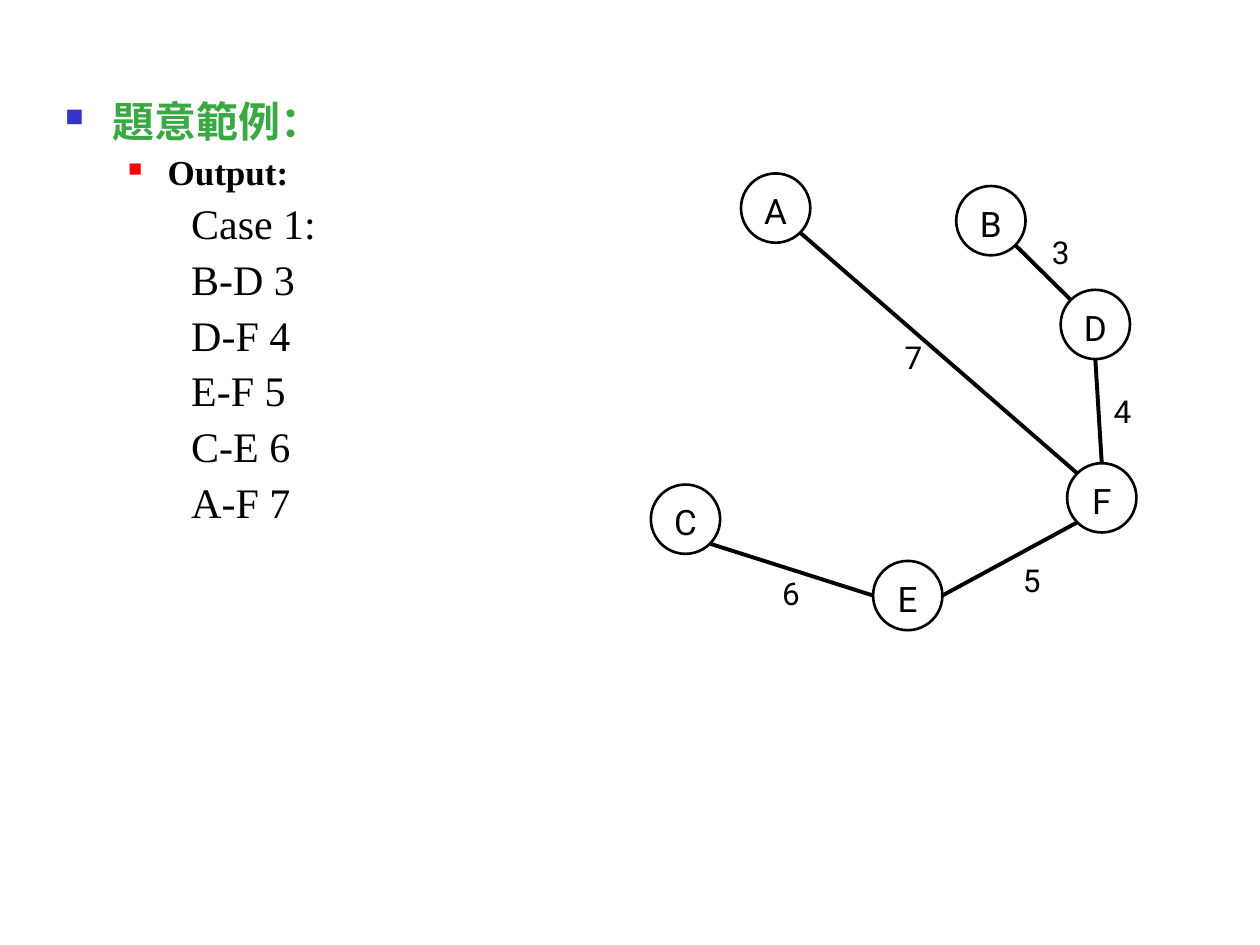
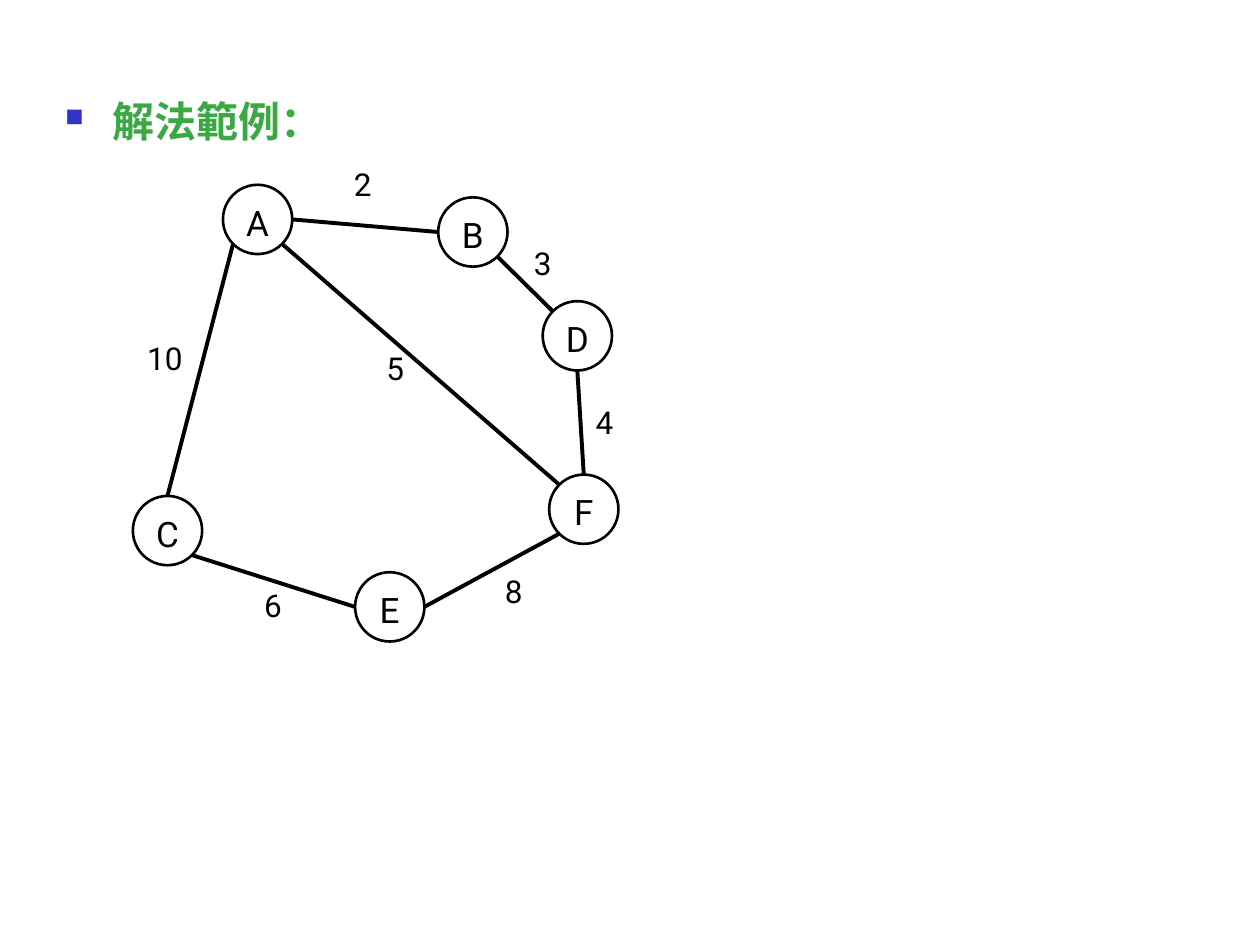
from lxml import etree
from pptx import Presentation
from pptx.dml.color import RGBColor
from pptx.enum.shapes import MSO_CONNECTOR, MSO_SHAPE
from pptx.enum.text import MSO_ANCHOR, PP_ALIGN
from pptx.oxml.ns import qn
from pptx.util import Pt

STRAIGHT, ELLIPSE = MSO_CONNECTOR.STRAIGHT, MSO_SHAPE.OVAL
MIDDLE, TOP = MSO_ANCHOR.MIDDLE, MSO_ANCHOR.TOP
LEFT, CENTER = PP_ALIGN.LEFT, PP_ALIGN.CENTER

# Shared style
COLORS = {"heading": "3BA943", "text": "000000",
          "bullet": "3333CC", "sub_bullet": "FF0000"}
BODY_FONT, GRAPH_FONT = "Times New Roman", "Roboto"
BODY_LEFT, BODY_TOP, BODY_WIDTH = 30.2, 54, 635.8
NODE_SIZE = 39.6
SMALL_LABEL, LARGE_LABEL, WIDE_LABEL = (19.4, 25.2), (28, 36), (41, 36)

# Paragraph levels: size, bold, colour, margin, hanging, bullet colour, bullet percent
LEVELS = {
    "heading": (24, True, "heading", 27, 27, "bullet", 60),
    "item": (20, True, "text", 58.5, 22.5, "sub_bullet", 55),
    "line": (24, False, "text", 72, 0, None, None),
}

# Graph: places are relative to the graph's left top corner
NODES = {"A": (51.5, 0), "B": (174.5, 7.2), "D": (234.2, 66.5),
         "F": (237.9, 165.6), "C": (0, 177.8), "E": (127, 221.4)}
DIAGONAL = 0.5 ** 0.5
SITES = {"top": (0, -1), "bottom": (0, 1), "left": (-1, 0), "right": (1, 0),
         "top left": (-DIAGONAL, -DIAGONAL), "bottom left": (-DIAGONAL, DIAGONAL),
         "bottom right": (DIAGONAL, DIAGONAL)}
# Edge: site at the first node, site at the second, place of the weight
EDGES = {
    "BD": ("bottom right", "top left", (222.1, 30.5)),
    "DF": ("bottom", "top", (257.4, 121.2)),
    "CE": ("bottom right", "left", (68, 225.6)),
    "EF": ("right", "bottom left", (205.6, 217.7)),
    "AF": ("bottom right", "top left", (137.9, 90.3)),
    "AC": ("bottom left", "top", (1.1, 84.5)),
    "AB": ("right", "left", (119.2, -14.9)),
}

SLIDES = [
    {"body": [("heading", "題意範例："), ("item", "Output:"), ("line", "Case 1:"),
              ("line", "B-D 3"), ("line", "D-F 4"), ("line", "E-F 5"),
              ("line", "C-E 6"), ("line", "A-F 7")],
     "body_height": 442.8,
     "origin": (371.9, 99.1),
     "weights": {"BD": ("3", SMALL_LABEL), "DF": ("4", SMALL_LABEL),
                 "AF": ("7", SMALL_LABEL), "CE": ("6", SMALL_LABEL),
                 "EF": ("5", SMALL_LABEL)}},
    {"body": [("heading", "解法範例：")],
     "body_height": 34.6,
     "origin": (75.9, 105.6),
     "weights": {"BD": ("3", SMALL_LABEL), "DF": ("4", SMALL_LABEL),
                 "AF": ("5", LARGE_LABEL), "CE": ("6", SMALL_LABEL),
                 "EF": ("8", LARGE_LABEL), "AC": ("10", WIDE_LABEL),
                 "AB": ("2", LARGE_LABEL)}},
]


def rgb(name):
    return RGBColor.from_string(COLORS[name])


def points(*values):
    return [Pt(value) for value in values]


def style_font(paragraph, name, size, color="text", bold=False):
    for run in paragraph.runs:
        font = run.font
        font.name, font.size, font.bold = name, Pt(size), bold
        font.color.rgb = rgb(color)


def set_margins(text_frame, left, top, right, bottom):
    text_frame.margin_left, text_frame.margin_top = points(left, top)
    text_frame.margin_right, text_frame.margin_bottom = points(right, bottom)


def set_bullet(paragraph, margin, hanging, color, percent):
    properties = paragraph._p.get_or_add_pPr()
    properties.set("marL", str(Pt(margin)))
    properties.set("indent", str(-Pt(hanging)))
    if color is None:
        etree.SubElement(properties, qn("a:buNone"))
        return
    bullet_color = etree.SubElement(properties, qn("a:buClr"))
    etree.SubElement(bullet_color, qn("a:srgbClr"), val=COLORS[color])
    etree.SubElement(properties, qn("a:buSzPct"), val=str(percent * 1000))
    etree.SubElement(properties, qn("a:buChar"), char="■")


def add_body(slide, lines, height):
    box = slide.shapes.add_textbox(*points(BODY_LEFT, BODY_TOP, BODY_WIDTH, height))
    text_frame = box.text_frame
    text_frame.word_wrap = True
    text_frame.text = "\n".join(text for _, text in lines)
    for paragraph, (level, _) in zip(text_frame.paragraphs, lines):
        size, bold, color, *bullet = LEVELS[level]
        paragraph.line_spacing = 0.9
        paragraph.space_before = Pt(size / 4)
        set_bullet(paragraph, *bullet)
        style_font(paragraph, BODY_FONT, size, color, bold)


def write_label(shape, text, size, alignment, anchor, margins):
    text_frame = shape.text_frame
    text_frame.text = text
    text_frame.word_wrap = False
    text_frame.vertical_anchor = anchor
    set_margins(text_frame, *margins)
    paragraph = text_frame.paragraphs[0]
    paragraph.alignment = alignment
    style_font(paragraph, GRAPH_FONT, size)


def add_node(slide, name, left, top):
    node = slide.shapes.add_shape(ELLIPSE, *points(left, top, NODE_SIZE, NODE_SIZE))
    node.shadow.inherit = False
    node.fill.background()
    node.line.color.rgb = rgb("text")
    node.line.width = Pt(1.5)
    write_label(node, name, 20, CENTER, MIDDLE, (0, 3, 0, 0))


def site_point(origin, node, site):
    radius = NODE_SIZE / 2
    return [start + offset + radius + radius * direction
            for start, offset, direction in zip(origin, NODES[node], SITES[site])]


def add_edge(slide, start, end):
    edge = slide.shapes.add_connector(STRAIGHT, *points(*start, *end))
    edge.line.color.rgb = rgb("text")
    edge.line.width = Pt(2.25)
    etree.SubElement(edge._element.spPr, qn("a:effectLst"))


def add_graph(slide, origin, weights):
    origin_left, origin_top = origin
    for name, (left, top) in NODES.items():
        add_node(slide, name, origin_left + left, origin_top + top)
    for edge, (weight, label_size) in weights.items():
        start_site, end_site, (left, top) = EDGES[edge]
        add_edge(slide, site_point(origin, edge[0], start_site),
                 site_point(origin, edge[1], end_site))
        label = slide.shapes.add_textbox(
            *points(origin_left + left, origin_top + top, *label_size))
        write_label(label, weight, 18, LEFT, TOP, (7.2, 3.6, 0, 0))


def main():
    presentation = Presentation()
    presentation.slide_width, presentation.slide_height = points(720, 540)
    blank_layout = presentation.slide_layouts[6]
    for content in SLIDES:
        slide = presentation.slides.add_slide(blank_layout)
        add_body(slide, content["body"], content["body_height"])
        add_graph(slide, content["origin"], content["weights"])
    presentation.save("out.pptx")


if __name__ == "__main__":
    main()
